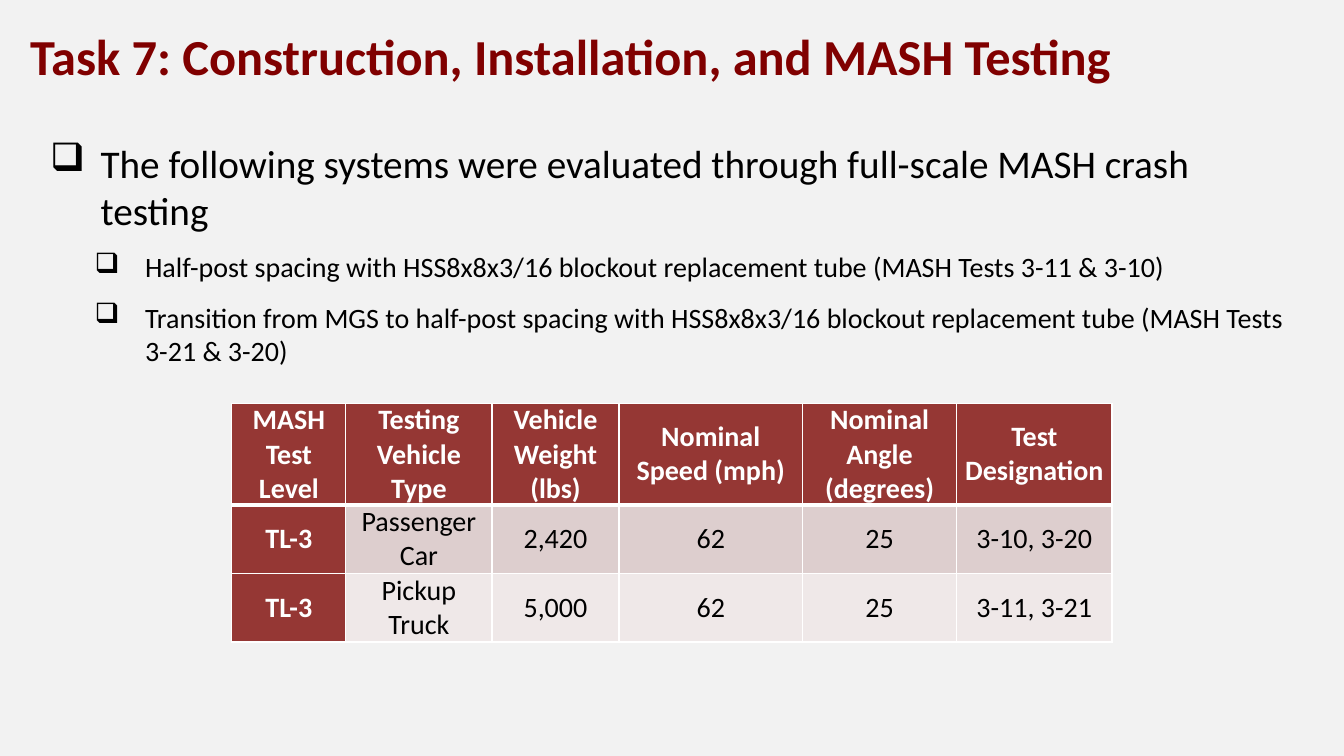
from lxml.etree import SubElement
from pptx import Presentation
from pptx.dml.color import RGBColor
from pptx.enum.text import MSO_ANCHOR, PP_ALIGN
from pptx.oxml.ns import qn
from pptx.util import Inches, Pt

FONT = "Calibri"
BACKGROUND, MAROON, BLACK, WHITE = "F2F2F2", "800000", "000000", "FFFFFF"
HEADER_FILL = "953734"
BAND_FILLS = ["DDCECE", "EFE8E8"]

TITLE = "Task 7: Construction, Installation, and MASH Testing"
BULLETS = [
    (0, "The following systems were evaluated through full-scale MASH crash testing"),
    (1, "Half-post spacing with HSS8x8x3/16 blockout replacement tube (MASH Tests 3-11 & 3-10)"),
    (1, "Transition from MGS to half-post spacing with HSS8x8x3/16 blockout replacement tube "
        "(MASH Tests 3-21 & 3-20)"),
]
LEVELS = {0: (0.5, 28), 1: (0.94, 20)}
HANGING = 0.5

TEST_ROWS = [
    ["MASH Test Level", "Testing Vehicle Type", "Vehicle Weight (lbs)",
     "Nominal Speed (mph)", "Nominal Angle (degrees)", "Test Designation"],
    ["TL-3", "Passenger Car", "2,420", "62", "25", "3-10, 3-20"],
    ["TL-3", "Pickup Truck", "5,000", "62", "25", "3-11, 3-21"],
]
COLUMN_WIDTHS = [1.13, 1.45, 1.26, 1.82, 1.53, 1.54]
ROW_HEIGHTS = [1.01, 0.68, 0.68]


def color(value):
    return RGBColor.from_string(value)


def style(paragraph, size, value, bold=False):
    paragraph.font.name = FONT
    paragraph.font.size = Pt(size)
    paragraph.font.bold = bold
    paragraph.font.color.rgb = color(value)


def add_text_frame(slide, left, top, width, height):
    box = slide.shapes.add_textbox(Inches(left), Inches(top), Inches(width), Inches(height))
    box.text_frame.word_wrap = True
    return box.text_frame


def add_bullet(paragraph, indent):
    properties = paragraph._p.get_or_add_pPr()
    properties.set("marL", str(Inches(indent)))
    properties.set("indent", str(-Inches(HANGING)))
    SubElement(properties, qn("a:buChar")).set("char", "❑")


def set_borders(cell, bottom_width, top_width):
    properties = cell._tc.get_or_add_tcPr()
    widths = {"a:lnL": 1, "a:lnR": 1, "a:lnT": top_width, "a:lnB": bottom_width}
    for tag, width in widths.items():
        line = SubElement(properties, qn(tag), w=str(Pt(width)))
        fill = SubElement(line, qn("a:solidFill"))
        SubElement(fill, qn("a:srgbClr"), val=WHITE)


def add_title(slide):
    frame = add_text_frame(slide, 0.2, 0.17, 12.53, 0.75)
    frame.vertical_anchor = MSO_ANCHOR.MIDDLE
    frame.text = TITLE
    style(frame.paragraphs[0], 36, MAROON, True)


def add_bullets(slide):
    frame = add_text_frame(slide, 0.4, 1.33, 12.53, 2.35)
    for index, (level, text) in enumerate(BULLETS):
        paragraph = frame.add_paragraph() if index else frame.paragraphs[0]
        indent, size = LEVELS[level]
        paragraph.text = text
        paragraph.level = level
        if index:
            paragraph.space_before = Pt(12)
        add_bullet(paragraph, indent)
        style(paragraph, size, BLACK)


def add_test_table(slide):
    table = slide.shapes.add_table(
        len(TEST_ROWS), len(COLUMN_WIDTHS), Inches(2.3), Inches(4),
        Inches(sum(COLUMN_WIDTHS)), Inches(sum(ROW_HEIGHTS))).table
    table.first_col = True
    for column, width in zip(table.columns, COLUMN_WIDTHS):
        column.width = Inches(width)
    for row, height in zip(table.rows, ROW_HEIGHTS):
        row.height = Inches(height)
    for row_index, texts in enumerate(TEST_ROWS):
        for column_index, text in enumerate(texts):
            cell = table.cell(row_index, column_index)
            heading = row_index == 0 or column_index == 0
            cell.text = text
            cell.vertical_anchor = MSO_ANCHOR.MIDDLE
            cell.margin_left = cell.margin_right = Inches(0.07)
            cell.margin_top = cell.margin_bottom = 0
            paragraph = cell.text_frame.paragraphs[0]
            paragraph.alignment = PP_ALIGN.CENTER
            style(paragraph, 20, WHITE if heading else BLACK, heading)
            set_borders(cell, 3 if row_index == 0 else 1, 3 if row_index == 1 else 1)
            cell.fill.solid()
            cell.fill.fore_color.rgb = color(HEADER_FILL if heading else BAND_FILLS[row_index - 1])


def main():
    presentation = Presentation()
    presentation.slide_width = Inches(13.33)
    presentation.slide_height = Inches(7.5)
    slide = presentation.slides.add_slide(presentation.slide_layouts[6])
    slide.background.fill.solid()
    slide.background.fill.fore_color.rgb = color(BACKGROUND)
    add_title(slide)
    add_bullets(slide)
    add_test_table(slide)
    presentation.save("out.pptx")


if __name__ == "__main__":
    main()
